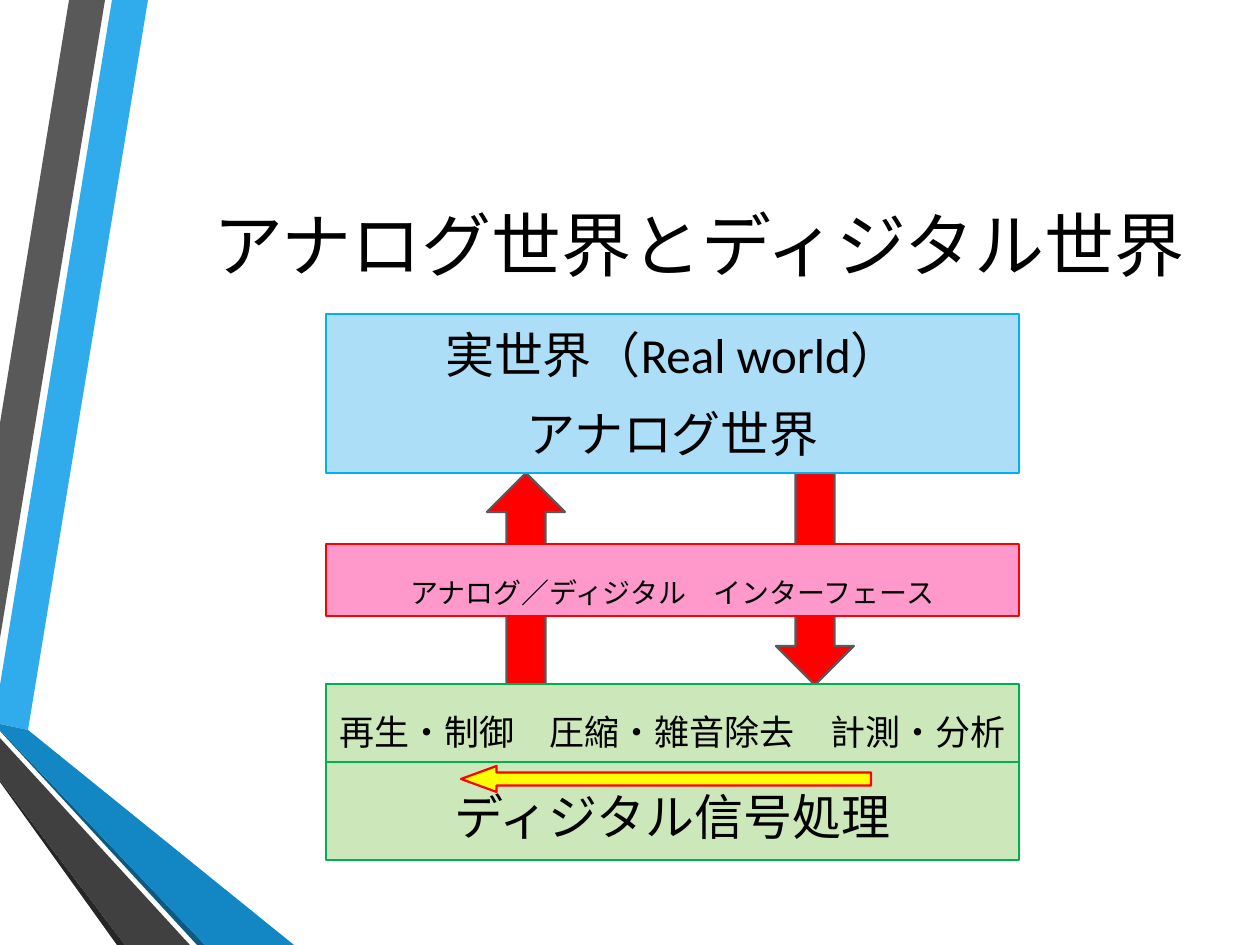
"""Build a slide on the analog world and the digital world."""
from pptx import Presentation
from pptx.dml.color import RGBColor
from pptx.enum.shapes import MSO_SHAPE as Kind
from pptx.enum.text import MSO_ANCHOR as Anchor, PP_ALIGN as Align
from pptx.util import Emu, Pt

PX = 914400 / 126
LEFT, WIDE = 326, 693
RED, GRAY, BLACK = "FF0000", "595959", "000000"
GREEN, LEAF = "CCE7B9", "00B050"

BANDS = [
    ("30ACEC", [(0, 685), (0, 724), (28, 730), (148, 0), (112, 0)]),
    (GRAY, [(105, 0), (69, 0), (0, 423), (0, 638)]),
    ("262626", [(0, 780), (0, 782), (117, 945), (125, 945)]),
    ("0C5A82", [(0, 730), (0, 731), (197, 945), (205, 945)]),
    ("1287C3", [(0, 730), (205, 945), (294, 945), (28, 730), (0, 724)]),
    ("404040", [(0, 780), (125, 945), (190, 945), (0, 738)]),
]
ARROWS = [
    (Kind.UP_ARROW, 487, 473, 78, 228),
    (Kind.DOWN_ARROW, 776, 473, 78, 212),
]
TITLE = "アナログ世界とディジタル世界"
BOXES = [
    (314, 159, "ACDEF7", "00B0F0",
     [("実世界（Real world）", "Calibri"), ("アナログ世界", "Times New Roman")],
     {"size": 28}),
    (701, 159, GREEN, LEAF, [("ディジタル信号処理", "Times New Roman")],
     {"size": 28, "anchor": Anchor.TOP, "top": 86, "after": 0}),
    (544, 72, "FF99CC", RED,
     [("アナログ／ディジタル　インターフェース", "Calibri")], {"size": 16}),
    (684, 78, GREEN, LEAF,
     [("再生・制御　圧縮・雑音除去　計測・分析", "Calibri")], {"size": 20}),
]


def px(num):
    return Emu(round(num * PX))


def tint(code):
    return RGBColor.from_string(code)


def paint(shape, fill, line=None, width=0.75):
    shape.shadow.inherit = False
    shape.fill.solid()
    shape.fill.fore_color.rgb = tint(fill)
    if line:
        shape.line.color.rgb = tint(line)
        shape.line.width = Pt(width)
    else:
        shape.line.fill.background()


def write(shape, lines, size=28, align=Align.CENTER, anchor=Anchor.MIDDLE,
          top=6, gap=33.6, before=6, after=6):
    frame = shape.text_frame
    frame.word_wrap = True
    frame.vertical_anchor = anchor
    frame.margin_top = px(top)
    for i, (text, face) in enumerate(lines):
        para = frame.add_paragraph() if i else frame.paragraphs[0]
        para.alignment = align
        para.space_before, para.space_after = Pt(before), Pt(after)
        if gap:
            para.line_spacing = Pt(gap)
        run = para.add_run()
        run.text = text
        run.font.name, run.font.size = face, Pt(size)
        run.font.color.rgb = tint(BLACK)


def add(shapes, kind, *place):
    return shapes.add_shape(kind, *map(px, place))


def main():
    deck = Presentation()
    deck.slide_width, deck.slide_height = px(1260), px(945)
    shapes = deck.slides.add_slide(deck.slide_layouts[6]).shapes

    for fill, dots in BANDS:
        pen = shapes.build_freeform(*dots[0], scale=PX)
        pen.add_line_segments(dots[1:], close=True)
        paint(pen.convert_to_shape(), fill)

    for kind, *place in ARROWS:
        paint(add(shapes, kind, *place), RED, GRAY, 1.25)

    title = shapes.add_textbox(*map(px, (135, 190, 1062, 108)))
    write(title, [(TITLE, "Calibri")], size=40, align=Align.RIGHT,
          gap=None, before=0, after=0)

    for top, high, fill, line, lines, form in BOXES:
        box = add(shapes, Kind.RECTANGLE, LEFT, top, WIDE, high)
        paint(box, fill, line)
        write(box, lines, **form)

    flow = add(shapes, Kind.LEFT_ARROW, 461, 766, 410, 26)
    flow.adjustments[1] = 1.37
    paint(flow, "FFFF00", RED, 1.25)

    deck.save("out.pptx")


if __name__ == "__main__":
    main()
